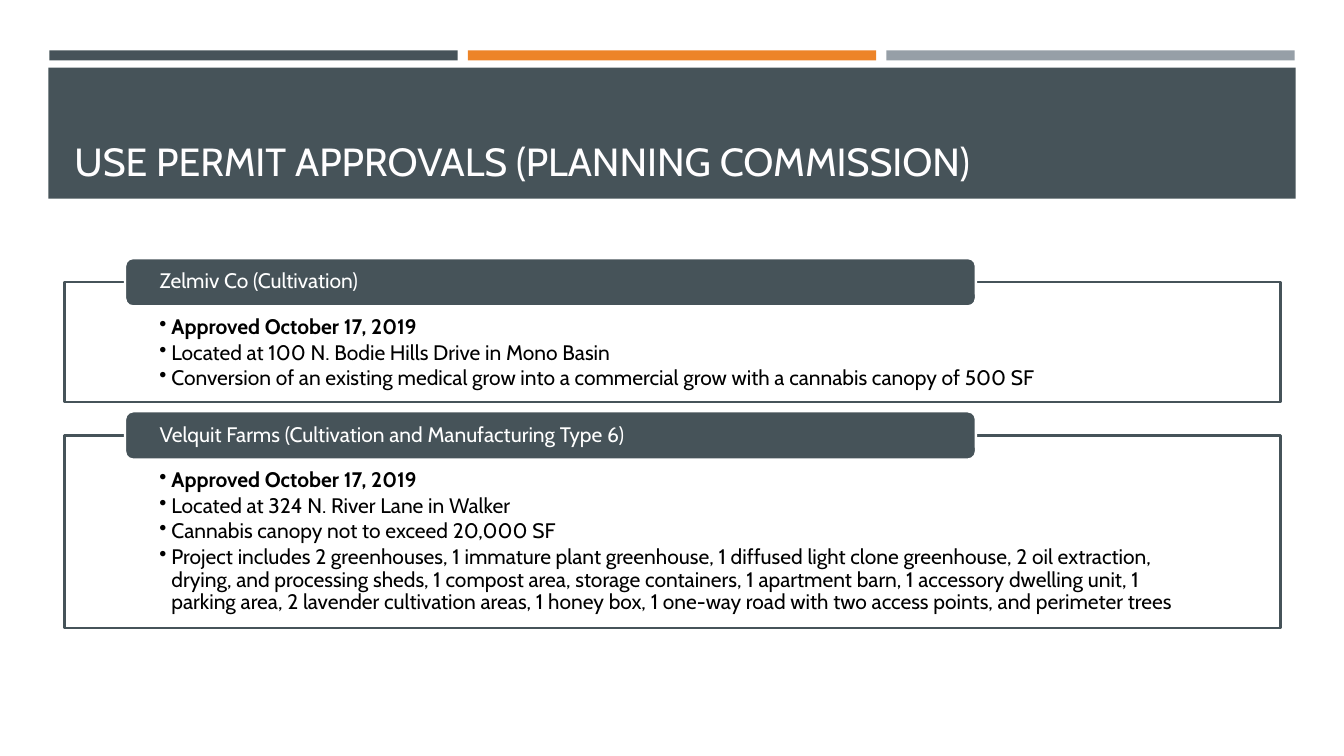
from lxml import etree
from pptx import Presentation
from pptx.dml.color import RGBColor
from pptx.enum.shapes import MSO_SHAPE
from pptx.enum.text import MSO_ANCHOR, PP_ALIGN
from pptx.oxml.ns import qn
from pptx.util import Emu, Pt

RECT = MSO_SHAPE.RECTANGLE
ROUNDED = MSO_SHAPE.ROUNDED_RECTANGLE
TOP, MIDDLE, BOTTOM = MSO_ANCHOR.TOP, MSO_ANCHOR.MIDDLE, MSO_ANCHOR.BOTTOM
LEFT = PP_ALIGN.LEFT

FONT = "Cabin"
SLATE, ORANGE, GREY = "465359", "ED8428", "969FA7"
WHITE, TITLE_WHITE, BLACK = "FFFFFF", "FFFEFF", "000000"

APPROVED = "Approved October 17, 2019"
PERMITS = [
    ("Zelmiv Co (Cultivation)", 119, [
        APPROVED,
        "Located at 100 N. Bodie Hills Drive in Mono Basin",
        "Conversion of an existing medical grow into a commercial grow "
        "with a cannabis canopy of 500 SF",
    ]),
    ("Velquit Farms (Cultivation and Manufacturing Type 6)", 191, [
        APPROVED,
        "Located at 324 N. River Lane in Walker",
        "Cannabis canopy not to exceed 20,000 SF",
        "Project includes 2 greenhouses, 1 immature plant greenhouse, "
        "1 diffused light clone greenhouse, 2 oil extraction, drying, and "
        "processing sheds, 1 compost area, storage containers, 1 apartment "
        "barn, 1 accessory dwelling unit, 1 parking area, 2 lavender "
        "cultivation areas, 1 honey box, 1 one-way road with two access "
        "points, and perimeter trees",
    ]),
]


def px(length):
    """Convert px, at 100 to the inch, into EMU."""
    return Emu(length * 9144)


def color(code):
    return RGBColor.from_string(code)


def add_box(page, kind, left, top, width, height, fill, line=None):
    box = page.shapes.add_shape(kind, px(left), px(top), px(width), px(height))
    box.shadow.inherit = False
    box.fill.solid()
    box.fill.fore_color.rgb = color(fill)
    if line:
        box.line.color.rgb = color(line)
        box.line.width = Pt(1.75)
    else:
        box.line.fill.background()
    return box


def set_frame(box, anchor, left, top, right, bottom):
    """Set the anchor and the px insets of a box's text."""
    frame = box.text_frame
    frame.word_wrap = True
    frame.vertical_anchor = anchor
    frame.margin_left, frame.margin_top = px(left), px(top)
    frame.margin_right, frame.margin_bottom = px(right), px(bottom)
    return frame


def add_span(para, text, size, ink, bold=False):
    para.alignment = LEFT
    para.line_spacing = 0.9
    span = para.add_run()
    span.text = text
    span.font.name = FONT
    span.font.size = Pt(size)
    span.font.bold = bold
    span.font.color.rgb = color(ink)


def add_bullet(para):
    properties = para._p.get_or_add_pPr()
    properties.set("marL", str(px(12)))
    properties.set("indent", str(px(-12)))
    etree.SubElement(properties, qn("a:buChar")).set("char", "•")


def add_banner(page, left, top, width, title):
    for index, fill in enumerate((SLATE, ORANGE, GREY)):
        add_box(page, RECT, left + 1 + index * 415, top, 405, 10, fill)
    add_box(page, RECT, left, top + 17, width, 130, SLATE)
    box = page.shapes.add_textbox(px(left + 16), px(top + 27), px(width - 31), px(111))
    frame = set_frame(box, BOTTOM, 10, 5, 10, 5)
    add_span(frame.paragraphs[0], title, 28, TITLE_WHITE)


def add_permit(page, left, top, width, height, heading, facts):
    panel = add_box(page, RECT, left, top, width, height, WHITE, SLATE)
    frame = set_frame(panel, TOP, 94, 34, 94, 12)
    for index, fact in enumerate(facts):
        para = frame.paragraphs[0] if index == 0 else frame.add_paragraph()
        add_span(para, fact, 15, BLACK, bold=index == 0)
        para.space_after = Pt(2)
        add_bullet(para)
    tab = add_box(page, ROUNDED, left + 60, top - 24, 844, 48, SLATE, WHITE)
    frame = set_frame(tab, MIDDLE, 32, 0, 32, 0)
    add_span(frame.paragraphs[0], heading, 15, WHITE)


def main():
    deck = Presentation()
    deck.slide_width, deck.slide_height = px(1333), px(750)
    page = deck.slides.add_slide(deck.slide_layouts[6])
    add_banner(page, 48, 50, 1237, "USE PERMIT APPROVALS (PLANNING COMMISSION)")
    top = 280
    for heading, height, facts in PERMITS:
        add_permit(page, 64, top, 1206, height, heading, facts)
        top += height + 33
    deck.save("out.pptx")


if __name__ == "__main__":
    main()
